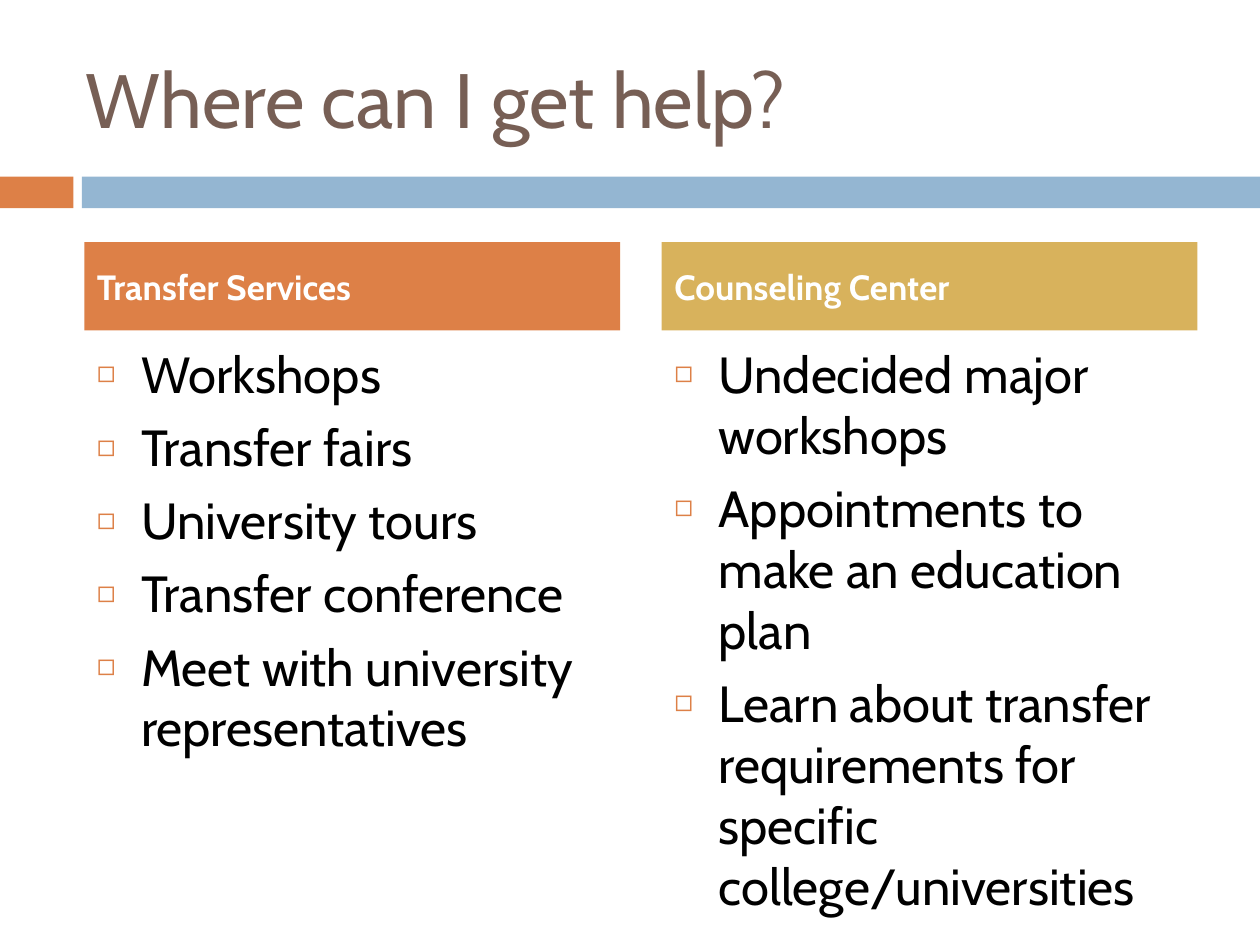
from lxml.etree import SubElement
from pptx import Presentation
from pptx.dml.color import RGBColor
from pptx.enum.shapes import MSO_SHAPE
from pptx.enum.text import MSO_ANCHOR, MSO_AUTO_SIZE, PP_ALIGN
from pptx.oxml.ns import qn
from pptx.util import Cm, Pt

FONT = "Cabin"
ORANGE = RGBColor(0xDD, 0x80, 0x47)
BLUE = RGBColor(0x94, 0xB6, 0xD2)
GOLD = RGBColor(0xD8, 0xB2, 0x5C)
BROWN = RGBColor(0x77, 0x5F, 0x55)
BLACK = RGBColor(0, 0, 0)
WHITE = RGBColor(0xFF, 0xFF, 0xFF)

COLUMN_WIDTH = 10.8
COLUMNS = [
    (1.7, "Transfer Services", ORANGE, [
        "Workshops",
        "Transfer fairs",
        "University tours",
        "Transfer conference",
        "Meet with university representatives",
    ]),
    (13.34, "Counseling Center", GOLD, [
        "Undecided major workshops",
        "Appointments to make an education plan",
        "Learn about transfer requirements for specific college/universities",
    ]),
]


def add_bar(slide, left, width, color):
    bar = slide.shapes.add_shape(
        MSO_SHAPE.RECTANGLE, Cm(left), Cm(3.56), Cm(width), Cm(0.64))
    bar.shadow.inherit = False
    bar.fill.solid()
    bar.fill.fore_color.rgb = color
    bar.line.fill.background()


def place(placeholder, left, top, width, height, anchor):
    placeholder.left, placeholder.top = Cm(left), Cm(top)
    placeholder.width, placeholder.height = Cm(width), Cm(height)
    text_frame = placeholder.text_frame
    text_frame.word_wrap = True
    text_frame.auto_size = MSO_AUTO_SIZE.NONE
    text_frame.vertical_anchor = anchor


def write(paragraph, text, size, color, space_before=0, bold=False):
    paragraph.alignment = PP_ALIGN.LEFT
    paragraph.space_before = Pt(space_before)
    run = paragraph.add_run()
    run.text = text
    run.font.name = FONT
    run.font.size = Pt(size)
    run.font.bold = bold
    run.font.color.rgb = color


def add_bullet(paragraph):
    """Give the paragraph a small orange square and a hanging indent."""
    properties = paragraph._p.get_or_add_pPr()
    properties.set("marL", str(Cm(0.89)))
    properties.set("indent", str(-Cm(0.89)))
    color = SubElement(properties, qn("a:buClr"))
    SubElement(color, qn("a:srgbClr"), val=str(ORANGE))
    SubElement(properties, qn("a:buSzPct"), val="60000")
    SubElement(properties, qn("a:buFont"), typeface=FONT)
    SubElement(properties, qn("a:buChar"), char="◻")


def fill_title(title, text):
    place(title, 1.47, 0.76, 22.66, 2.41, MSO_ANCHOR.MIDDLE)
    write(title.text_frame.paragraphs[0], text, 44, BROWN)


def fill_heading(heading, left, text, color):
    place(heading, left, 4.88, COLUMN_WIDTH, 1.78, MSO_ANCHOR.MIDDLE)
    heading.fill.solid()
    heading.fill.fore_color.rgb = color
    write(heading.text_frame.paragraphs[0], text, 20, WHITE, 7, bold=True)


def fill_list(body, left, items):
    place(body, left, 6.78, COLUMN_WIDTH, 9.96, MSO_ANCHOR.TOP)
    text_frame = body.text_frame
    for index, item in enumerate(items):
        paragraph = text_frame.add_paragraph() if index else text_frame.paragraphs[0]
        write(paragraph, item, 29, BLACK, 7)
        add_bullet(paragraph)


def main():
    presentation = Presentation()
    presentation.slide_width, presentation.slide_height = Cm(25.4), Cm(19.05)
    comparison_layout = presentation.slide_layouts[4]
    slide = presentation.slides.add_slide(comparison_layout)

    add_bar(slide, 0, 1.48, ORANGE)
    add_bar(slide, 1.65, 23.75, BLUE)
    fill_title(slide.shapes.title, "Where can I get help?")

    _, *column_placeholders = slide.placeholders
    headings, bodies = column_placeholders[0:4:2], column_placeholders[1:4:2]
    for heading, body, column in zip(headings, bodies, COLUMNS):
        left, text, color, items = column
        fill_heading(heading, left, text, color)
        fill_list(body, left, items)

    presentation.save("out.pptx")


if __name__ == "__main__":
    main()
